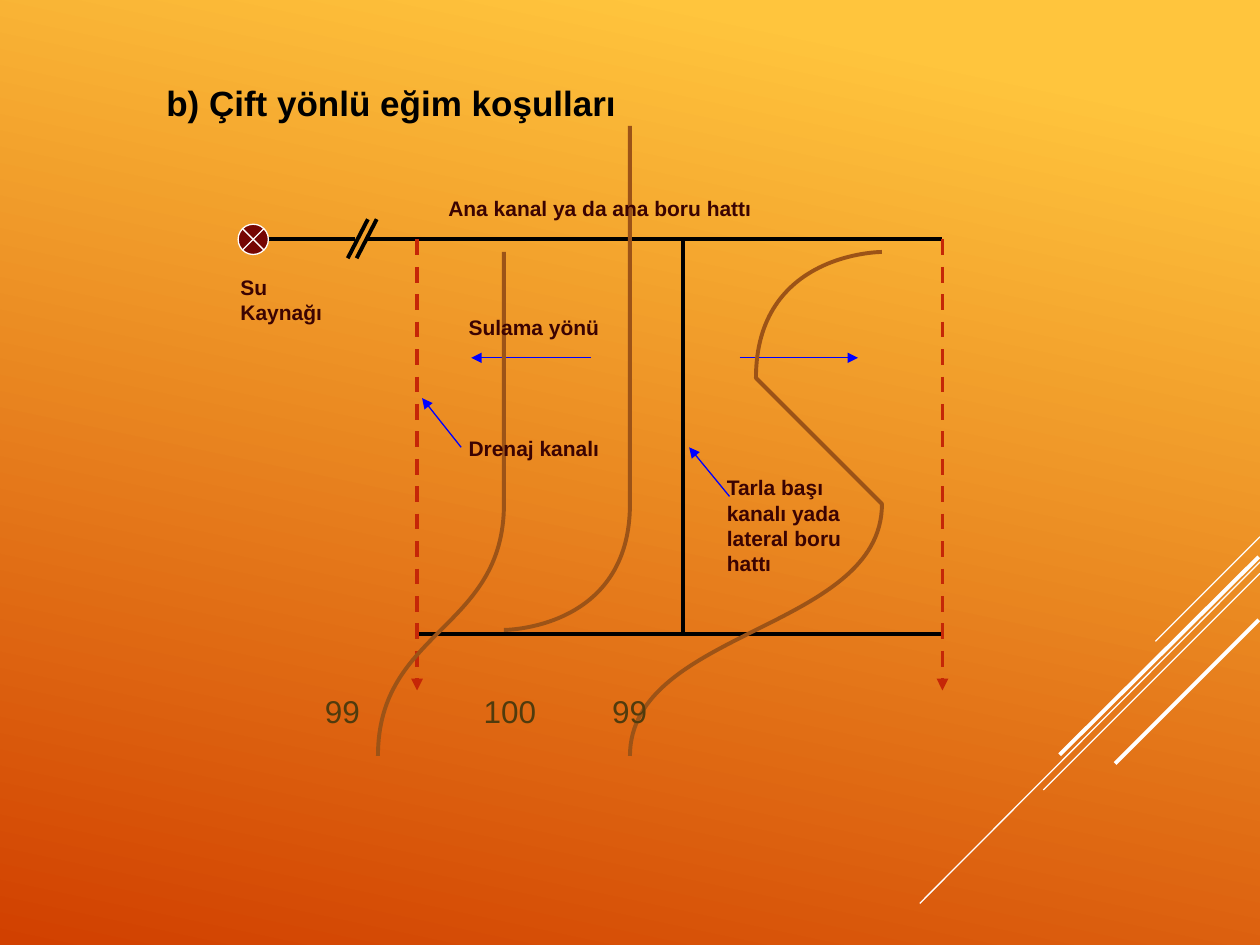
import dataclasses

import lxml.etree
import pptx
import pptx.dml.color
import pptx.enum.dml
import pptx.enum.shapes
import pptx.enum.text
import pptx.oxml.ns
import pptx.util

Inches = pptx.util.Inches
Pt = pptx.util.Pt
qn = pptx.oxml.ns.qn


@dataclasses.dataclass(frozen=True)
class Theme:
    font: str = "Arial"
    title: float = 20
    label: float = 12
    level: float = 18
    thin: float = 0.75
    thick: float = 2.25
    glow: str = "FFC53D"
    ember: str = "D14000"
    black: str = "000000"
    white: str = "FFFFFF"
    blue: str = "0000FF"
    drain: str = "C52707"
    source: str = "760603"
    contour: str = "9C5317"
    brown: str = "503B0D"
    maroon: str = "3B0302"


def paint(code):
    return pptx.dml.color.RGBColor.from_string(code)


def write(frame, text, *, font, size, color, bold=False):
    frame.word_wrap = True
    frame.vertical_anchor = pptx.enum.text.MSO_ANCHOR.TOP
    frame.auto_size = pptx.enum.text.MSO_AUTO_SIZE.SHAPE_TO_FIT_TEXT
    para = frame.paragraphs[0]
    para.text = text
    para.alignment = pptx.enum.text.PP_ALIGN.LEFT
    para.space_before = Pt(0)
    para.font.name = font
    para.font.size = Pt(size)
    para.font.bold = bold
    para.font.color.rgb = paint(color)


class Sketch:
    def __init__(self, slide, theme):
        self.slide = slide
        self.theme = theme

    def backdrop(self):
        fill = self.slide.background.fill
        fill.gradient()
        fill.gradient_angle = 258
        stops = zip(fill.gradient_stops, (0.1, 1), (self.theme.glow, self.theme.ember))
        for stop, place, color in stops:
            stop.position = place
            stop.color.rgb = paint(color)

    def title(self, text, left, top, width, height):
        shape = self.slide.shapes.title
        shape.left, shape.top = Inches(left), Inches(top)
        shape.width, shape.height = Inches(width), Inches(height)
        write(shape.text_frame, text, font=self.theme.font, size=self.theme.title,
              color=self.theme.black, bold=True)

    def label(self, text, left, top, width, height, **style):
        box = self.slide.shapes.add_textbox(
            Inches(left), Inches(top), Inches(width), Inches(height))
        look = dict(font=self.theme.font, size=self.theme.label,
                    color=self.theme.maroon, bold=True)
        write(box.text_frame, text, **(look | style))

    def line(self, start, end, color, width, dash=False, arrow=False):
        link = self.slide.shapes.add_connector(
            pptx.enum.shapes.MSO_CONNECTOR.STRAIGHT,
            *(Inches(n) for n in (*start, *end)))
        link.line.color.rgb = paint(color)
        link.line.width = Pt(width)
        if dash:
            link.line.dash_style = pptx.enum.dml.MSO_LINE.DASH
        props = link._element.spPr
        if arrow:
            lxml.etree.SubElement(props.find(qn("a:ln")), qn("a:tailEnd"), type="triangle")
        lxml.etree.SubElement(props, qn("a:effectLst"))

    def source(self, left, top, size):
        shape = self.slide.shapes.add_shape(
            pptx.enum.shapes.MSO_SHAPE.FLOWCHART_SUMMING_JUNCTION,
            Inches(left), Inches(top), Inches(size), Inches(size))
        shape.shadow.inherit = False
        shape.fill.solid()
        shape.fill.fore_color.rgb = paint(self.theme.source)
        shape.line.color.rgb = paint(self.theme.white)
        shape.line.width = Pt(self.theme.thin)

    def curve(self, points):
        """Draw a start point and then triples of cubic Bézier points."""
        pen = self.slide.shapes.build_freeform(*points[0], scale=Inches(1))
        pen.add_line_segments(points[1:], close=False)
        shape = pen.convert_to_shape()
        shape.shadow.inherit = False
        shape.fill.background()
        shape.line.color.rgb = paint(self.theme.contour)
        shape.line.width = Pt(self.theme.thick)
        track = shape._element.spPr.find(".//" + qn("a:path"))
        steps = track.findall(qn("a:lnTo"))
        for i in range(0, len(steps), 3):
            bend = lxml.etree.SubElement(track, qn("a:cubicBezTo"))
            for step in steps[i:i + 3]:
                bend.append(step[0])
                track.remove(step)


def main():
    deck = pptx.Presentation()
    deck.slide_width, deck.slide_height = Inches(10), Inches(7.5)
    theme = Theme()
    sketch = Sketch(deck.slides.add_slide(deck.slide_layouts[5]), theme)
    sketch.backdrop()

    for start, end, width in (
        ((10, 4.26), (9.17, 5.09), theme.thin),
        ((10, 4.46), (7.3, 7.17), theme.thin),
        ((10, 4.55), (8.28, 6.27), theme.thin),
        ((9.99, 4.42), (8.41, 5.99), theme.thick),
        ((9.99, 4.92), (8.85, 6.06), theme.thick),
    ):
        sketch.line(start, end, theme.white, width)

    west, mid, east = 3.31, 5.42, 7.48
    main_y, base_y, drain_y = 1.9, 5.03, 5.48
    for start, end in (
        ((2.91, main_y), (east, main_y)),
        ((west, base_y), (east, base_y)),
        ((2.12, main_y), (2.82, main_y)),
        ((2.99, 1.74), (2.83, 2.05)),
        ((2.92, 1.74), (2.76, 2.05)),
        ((mid, main_y), (mid, 5.05)),
    ):
        sketch.line(start, end, theme.black, theme.thick)
    sketch.source(1.89, 1.78, 0.24)

    for x in (west, east):
        sketch.line((x, main_y), (x, drain_y), theme.drain, theme.thick,
                    dash=True, arrow=True)
    for start, end in (
        ((4.69, 2.84), (3.74, 2.84)),
        ((5.87, 2.84), (6.81, 2.84)),
        ((5.79, 3.94), (5.47, 3.55)),
        ((3.66, 3.55), (3.35, 3.16)),
    ):
        sketch.line(start, end, theme.blue, theme.thin, arrow=True)

    crest = [(5.47, 1.27), (5.22, 1.66), (4.97, 2.05), (4.92, 2.53), (4.87, 3),
             (5.31, 3.63), (5.16, 4.1), (5, 4.57), (4.17, 5.15), (3.98, 5.36)]
    right = [(7.13, 1.5), (6.81, 1.9), (6.5, 2.29), (6.43, 2.76), (6.36, 3.23),
             (6.93, 3.86), (6.73, 4.34), (6.53, 4.81), (5.48, 5.39), (5.24, 5.6)]
    left = [(x - 1.1, y + 0.23) for x, y in crest]
    for points in (crest, right, left):
        sketch.curve(points)

    sketch.title("b) Çift yönlü eğim koşulları", 1.22, 0.6, 6.93, 0.44)
    sketch.label("Su Kaynağı", 1.81, 2.13, 0.86, 0.5)
    sketch.label("Tarla başı kanalı yada lateral boru hattı", 5.67, 3.72, 1.42, 0.91)
    sketch.label("Ana kanal ya da ana boru hattı", 3.46, 1.5, 5.67, 0.3)
    sketch.label("Drenaj kanalı", 3.62, 3.41, 1.42, 0.3)
    sketch.label("Sulama yönü", 3.62, 2.45, 1.42, 0.3)
    for text, x in (("99", 2.48), ("100", 3.74), ("99", 4.76)):
        sketch.label(text, x, 5.44, 0.71, 0.4, size=theme.level,
                     color=theme.brown, bold=False)

    deck.save("out.pptx")


if __name__ == "__main__":
    main()
